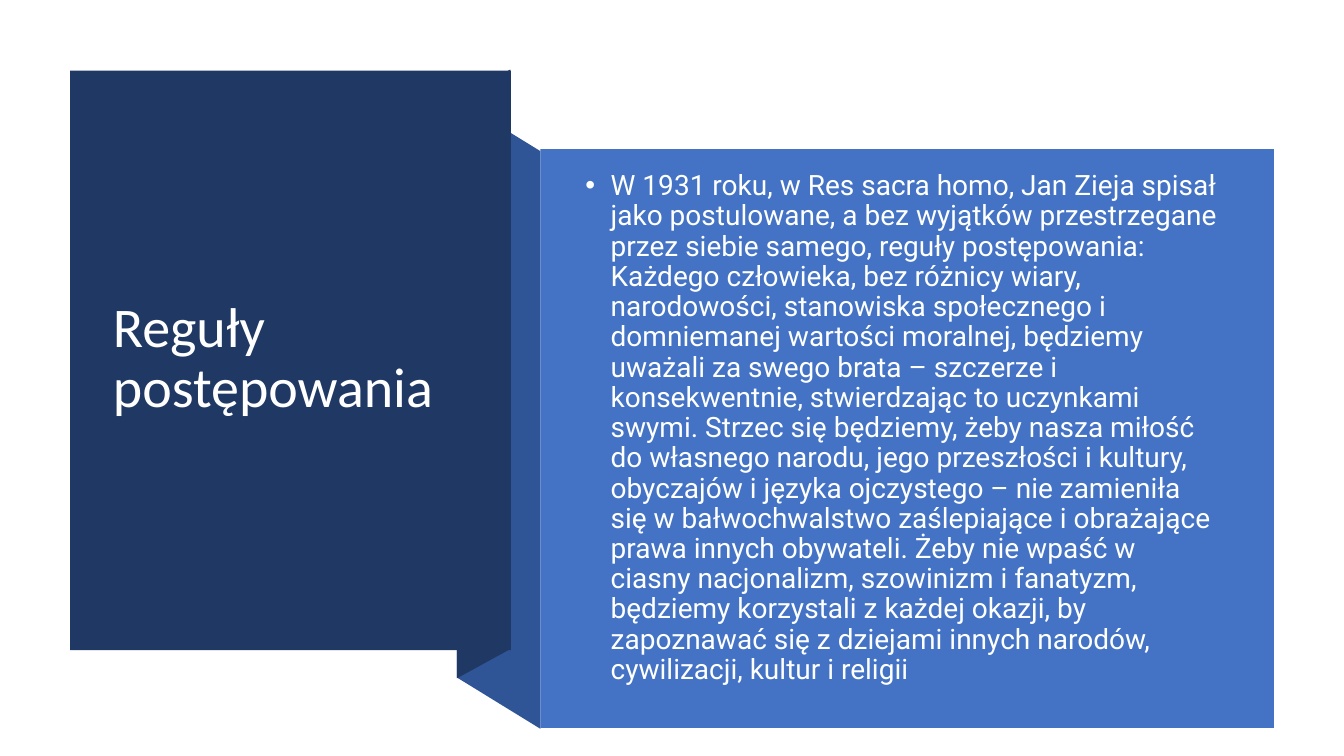
from dataclasses import dataclass

from lxml import etree
from pptx import Presentation
from pptx.dml.color import RGBColor
from pptx.enum.shapes import MSO_SHAPE
from pptx.enum.text import MSO_ANCHOR, MSO_AUTO_SIZE, PP_ALIGN
from pptx.oxml.ns import qn
from pptx.util import Pt

RECT = MSO_SHAPE.RECTANGLE
MIDDLE = MSO_ANCHOR.MIDDLE
NO_FIT = MSO_AUTO_SIZE.NONE
LEFT = PP_ALIGN.LEFT


@dataclass(frozen=True)
class Theme:
    navy: str = "203864"
    fold: str = "2F5597"
    blue: str = "4472C4"
    white: str = "FFFFFF"
    soft: str = "FEFFFF"
    head_font: str = "Calibri"
    body_font: str = "Roboto"
    head_size: float = 40
    body_size: float = 20


@dataclass(frozen=True)
class Box:
    left: float
    top: float
    width: float
    height: float


@dataclass(frozen=True)
class Flap:
    """Slanted band: both sides share one height."""
    left: float
    right: float
    left_top: float
    right_top: float
    height: float
    color: str


THEME = Theme()
CARD = Box(50, 50.4, 315, 414)
PANEL = Box(386, 106.6, 524, 413.3)
HEAD = Box(73.5, 77, 267, 359.3)
BODY = Box(411.1, 135.4, 468.7, 341.3)
FLAPS = [
    Flap(326.3, 386, 71.3, 108, 412.6, THEME.fold),
    Flap(326.3, 364.5, 70.6, 49.7, 414, THEME.navy),
]
RULES = (
    "W 1931 roku, w Res sacra homo, Jan Zieja spisał jako postulowane, "
    "a bez wyjątków przestrzegane przez siebie samego, reguły postępowania: "
    "Każdego człowieka, bez różnicy wiary, narodowości, stanowiska społecznego "
    "i domniemanej wartości moralnej, będziemy uważali za swego brata – szczerze "
    "i konsekwentnie, stwierdzając to uczynkami swymi. Strzec się będziemy, żeby "
    "nasza miłość do własnego narodu, jego przeszłości i kultury, obyczajów "
    "i języka ojczystego – nie zamieniła się w bałwochwalstwo zaślepiające "
    "i obrażające prawa innych obywateli. Żeby nie wpaść w ciasny nacjonalizm, "
    "szowinizm i fanatyzm, będziemy korzystali z każdej okazji, by zapoznawać się "
    "z dziejami innych narodów, cywilizacji, kultur i religii"
)


def paint(shape, color: str) -> None:
    shape.shadow.inherit = False
    shape.fill.solid()
    shape.fill.fore_color.rgb = RGBColor.from_string(color)
    shape.line.fill.background()


def add_flap(slide, flap: Flap) -> None:
    build = slide.shapes.build_freeform(
        Pt(flap.left), Pt(flap.left_top), scale=1.0)
    build.add_line_segments([
        (Pt(flap.right), Pt(flap.right_top)),
        (Pt(flap.right), Pt(flap.right_top + flap.height)),
        (Pt(flap.left), Pt(flap.left_top + flap.height)),
    ], close=True)
    paint(build.convert_to_shape(), flap.color)


def add_rect(slide, box: Box, color: str) -> None:
    shape = slide.shapes.add_shape(
        RECT, Pt(box.left), Pt(box.top), Pt(box.width), Pt(box.height))
    paint(shape, color)


def set_text(shape, text: str, *, font: str, size: float, color: str,
             before: float = 0, bullet: str = "", indent: float = 0) -> None:
    frame = shape.text_frame
    frame.word_wrap = True
    frame.auto_size = NO_FIT
    frame.vertical_anchor = MIDDLE
    para = frame.paragraphs[0]
    para.alignment = LEFT
    para.line_spacing = 0.9
    para.space_before = Pt(before)
    run = para.add_run()
    run.text = text
    run.font.name = font
    run.font.size = Pt(size)
    run.font.color.rgb = RGBColor.from_string(color)
    if bullet:
        props = para._p.get_or_add_pPr()
        props.set("marL", str(Pt(indent)))
        props.set("indent", str(-Pt(indent)))
        etree.SubElement(props, qn("a:buFont"), typeface="Arial")
        etree.SubElement(props, qn("a:buChar"), char=bullet)


def main() -> None:
    deck = Presentation()
    deck.slide_width, deck.slide_height = Pt(960), Pt(540)
    slide = deck.slides.add_slide(deck.slide_layouts[5])

    # Folded ribbon and panels
    for flap in FLAPS:
        add_flap(slide, flap)
    add_rect(slide, CARD, THEME.navy)
    add_rect(slide, PANEL, THEME.blue)

    # Title, raised above the card
    title = slide.shapes.title
    title.left, title.top = Pt(HEAD.left), Pt(HEAD.top)
    title.width, title.height = Pt(HEAD.width), Pt(HEAD.height)
    title.element.getparent().append(title.element)
    set_text(title, "Reguły postępowania", font=THEME.head_font,
             size=THEME.head_size, color=THEME.white)

    # Rules of conduct
    body = slide.shapes.add_textbox(
        Pt(BODY.left), Pt(BODY.top), Pt(BODY.width), Pt(BODY.height))
    set_text(body, RULES, font=THEME.body_font, size=THEME.body_size,
             color=THEME.soft, before=10, bullet="•", indent=18)

    deck.save("out.pptx")


if __name__ == "__main__":
    main()
